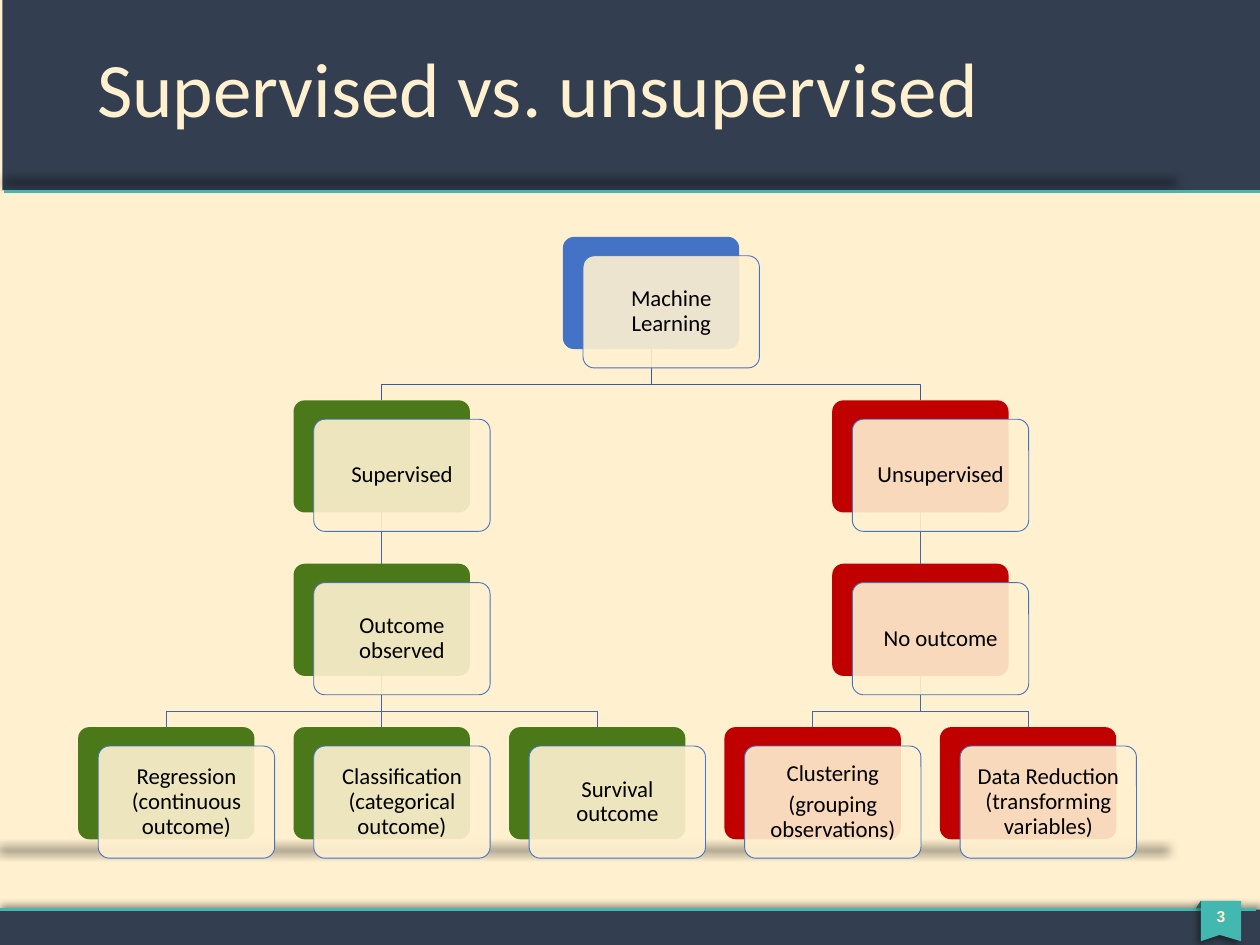
"""Build a slide with a tree of supervised and unsupervised learning."""
from dataclasses import dataclass
from typing import Optional

from lxml import etree
from pptx import Presentation
from pptx import util as u
from pptx.dml.color import RGBColor
from pptx.enum import shapes, text
from pptx.oxml.ns import qn


@dataclass(frozen=True)
class Theme:
    font: str = "Calibri"
    number_font: str = "Arial"
    title_size: int = 44
    node_size: int = 13
    number_size: int = 9
    cream: str = "FFF1D0"
    navy: str = "333F50"
    teal: str = "42B8B0"
    dark_teal: str = "225C58"
    black: str = "000000"
    blue: str = "4472C4"
    green: str = "4B7919"
    red: str = "C00000"
    root_link: str = "365B9D"
    link: str = "3E67B2"


@dataclass(frozen=True)
class Shadow:
    alpha: int
    blur: float
    distance: float
    angle: int
    scale: int = 100


@dataclass(frozen=True)
class Node:
    lines: tuple[str, ...]
    column: float
    row: int
    color: str
    parent: Optional[int] = None

    @property
    def left(self) -> float:
        return 0.62 + 1.71 * self.column

    @property
    def top(self) -> float:
        return 1.88 + 1.297 * self.row

    @property
    def center(self) -> float:
        return self.left + NODE_W / 2


T = Theme()
NODE_W, NODE_H = 1.4, 0.89
OFFSET_X, OFFSET_Y = 0.16, 0.15
BEND = 0.28
RULE_SHADOW = Shadow(90, 6, 2, 90, 93)
NODES = (
    Node(("Machine Learning",), 2.25, 0, T.blue),
    Node(("Supervised",), 1, 1, T.green, 0),
    Node(("Unsupervised",), 3.5, 1, T.red, 0),
    Node(("Outcome observed",), 1, 2, T.green, 1),
    Node(("No outcome",), 3.5, 2, T.red, 2),
    Node(("Regression (continuous outcome)",), 0, 3, T.green, 3),
    Node(("Classification (categorical outcome)",), 1, 3, T.green, 3),
    Node(("Survival outcome",), 2, 3, T.green, 3),
    Node(("Clustering", "(grouping observations)"), 3, 3, T.red, 4),
    Node(("Data Reduction (transforming variables)",), 4, 3, T.red, 4),
)


def rgb(color: str) -> RGBColor:
    return RGBColor.from_string(color)


def set_effect(s, shadow: Optional[Shadow] = None) -> None:
    sp_pr = s._element.spPr
    for old in sp_pr.findall(qn("a:effectLst")):
        sp_pr.remove(old)
    effects = etree.SubElement(sp_pr, qn("a:effectLst"))
    if shadow:
        outer = etree.SubElement(
            effects, qn("a:outerShdw"), blurRad=str(u.Pt(shadow.blur)),
            dist=str(u.Pt(shadow.distance)), dir=str(shadow.angle * 60000),
            sx=str(shadow.scale * 1000), sy=str(shadow.scale * 1000),
            algn="tl", rotWithShape="0")
        color = etree.SubElement(outer, qn("a:srgbClr"), val=T.black)
        etree.SubElement(color, qn("a:alpha"), val=str(shadow.alpha * 1000))


def paint(s, fill: Optional[str], line: Optional[str] = None,
          shadow: Optional[Shadow] = None) -> None:
    if fill:
        s.fill.solid()
        s.fill.fore_color.rgb = rgb(fill)
    else:
        s.fill.background()
    if line:
        s.line.color.rgb = rgb(line)
        s.line.width = u.Pt(0.5)
    else:
        s.line.fill.background()
    set_effect(s, shadow)


def add_box(slide, kind, left: float, top: float, width: float, height: float,
            fill: str, line: Optional[str] = None,
            shadow: Optional[Shadow] = None):
    s = slide.shapes.add_shape(kind, u.Inches(left), u.Inches(top),
                               u.Inches(width), u.Inches(height))
    paint(s, fill, line, shadow)
    return s


def add_line(slide, x1: float, y1: float, x2: float, y2: float, color: str,
             width: float, shadow: Optional[Shadow] = None):
    s = slide.shapes.add_connector(
        shapes.MSO_CONNECTOR.STRAIGHT, u.Inches(x1), u.Inches(y1),
        u.Inches(x2), u.Inches(y2))
    s.line.color.rgb = rgb(color)
    s.line.width = u.Pt(width)
    set_effect(s, shadow)
    return s


def add_outline(slide, points: list[tuple[float, float]], closed: bool):
    start, *rest = [(u.Inches(x), u.Inches(y)) for x, y in points]
    builder = slide.shapes.build_freeform(*start)
    builder.add_line_segments(rest, close=closed)
    return builder.convert_to_shape()


def add_run(p, words: str, size: float, color: str, font: str = T.font,
            bold: bool = False) -> None:
    r = p.add_run()
    r.text = words
    r.font.name, r.font.size, r.font.bold = font, u.Pt(size), bold
    r.font.color.rgb = rgb(color)


def add_frame(slide) -> None:
    rect = shapes.MSO_SHAPE.RECTANGLE
    add_box(slide, rect, 0.02, -0.2, 10, 1.71, T.navy)
    add_line(slide, 0.03, 1.52, 10.02, 1.52, T.teal, 2, RULE_SHADOW)
    add_box(slide, rect, 0, 7.22, 10, 0.28, T.navy, shadow=Shadow(40, 4, 3, 270))
    add_line(slide, -0.02, 7.22, 9.97, 7.22, T.teal, 2, RULE_SHADOW)
    flag = add_outline(slide, [(9.53, 7.15), (9.85, 7.15), (9.85, 7.47),
                               (9.68, 7.42), (9.53, 7.47)], True)
    paint(flag, T.teal, shadow=Shadow(40, 4, 3, 135))
    number = slide.shapes.add_textbox(u.Inches(9.48), u.Inches(7.15),
                                      u.Inches(0.42), u.Inches(0.25))
    number.text_frame.word_wrap = True
    p = number.text_frame.paragraphs[0]
    p.alignment = text.PP_ALIGN.CENTER
    add_run(p, "3", T.number_size, T.cream, T.number_font, True)
    fold = add_box(slide, shapes.MSO_SHAPE.RIGHT_TRIANGLE,
                   9.48, 7.16, 0.06, 0.04, T.dark_teal)
    fold.rotation = 270


def add_title(slide, words: str) -> None:
    s = slide.shapes.title
    s.left, s.top, s.width, s.height = map(u.Inches, (0.67, 0.01, 8.62, 1.45))
    s.text_frame.vertical_anchor = text.MSO_ANCHOR.MIDDLE
    p = s.text_frame.paragraphs[0]
    p.alignment, p.line_spacing = text.PP_ALIGN.LEFT, 0.9
    add_run(p, words, T.title_size, T.cream)
    slide.shapes._spTree.append(s._element)


def add_card(slide, node: Node, fill: str, shift_x: float = 0,
             shift_y: float = 0, line: Optional[str] = None):
    s = add_box(slide, shapes.MSO_SHAPE.ROUNDED_RECTANGLE, node.left + shift_x,
                node.top + shift_y, NODE_W, NODE_H, fill, line)
    s.adjustments[0] = 0.1
    return s


def add_link(slide, parent: Node, child: Node, parent_card, child_card) -> None:
    color = T.root_link if parent.row == 0 else T.link
    bottom = parent.top + NODE_H
    if parent.column == child.column:
        s = add_line(slide, parent.center, bottom, child.center, child.top,
                     color, 0.5)
        s.begin_connect(parent_card, 2)
        s.end_connect(child_card, 0)
    else:
        s = add_outline(slide, [(parent.center, bottom),
                                (parent.center, bottom + BEND),
                                (child.center, bottom + BEND),
                                (child.center, child.top)], False)
        paint(s, None, color)


def add_panel(slide, node: Node) -> None:
    s = add_card(slide, node, T.cream, OFFSET_X, OFFSET_Y, T.blue)
    color = s._element.spPr.find(qn("a:solidFill"))[0]
    etree.SubElement(color, qn("a:alpha"), val="90000")
    tf = s.text_frame
    tf.word_wrap = True
    tf.vertical_anchor = text.MSO_ANCHOR.MIDDLE
    tf.margin_left = tf.margin_right = u.Inches(0.05)
    tf.margin_top = tf.margin_bottom = u.Inches(0.05)
    for i, words in enumerate(node.lines):
        p = tf.add_paragraph() if i else tf.paragraphs[0]
        p.alignment, p.line_spacing = text.PP_ALIGN.CENTER, 0.9
        p.space_after = u.Pt(4)
        add_run(p, words, T.node_size, T.black)


def main() -> None:
    prs = Presentation()
    prs.slide_width, prs.slide_height = u.Inches(10), u.Inches(7.5)
    slide = prs.slides.add_slide(prs.slide_layouts[5])
    slide.background.fill.solid()
    slide.background.fill.fore_color.rgb = rgb(T.cream)
    add_frame(slide)
    add_title(slide, "Supervised vs. unsupervised")
    cards = [add_card(slide, node, node.color) for node in NODES]
    for node, card in zip(NODES, cards):
        if node.parent is not None:
            add_link(slide, NODES[node.parent], node, cards[node.parent], card)
    for node in NODES:
        add_panel(slide, node)
    prs.save("out.pptx")


if __name__ == "__main__":
    main()
